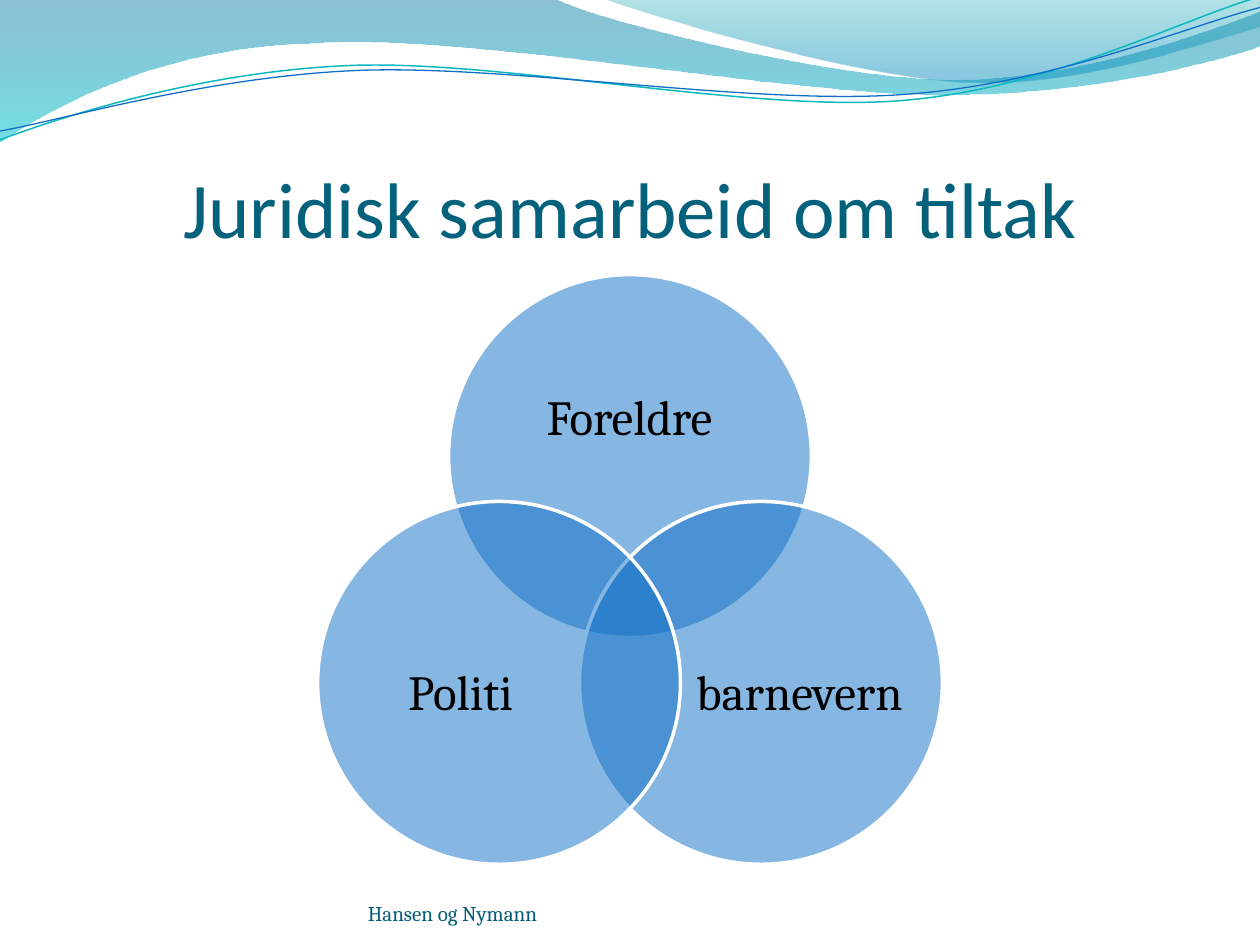
from math import cos, radians, sin

from pptx import Presentation
from pptx import util as u
from pptx.dml.color import RGBColor
from pptx.enum import shapes, text
from pptx.oxml.ns import qn
from pptx.oxml.xmlchemy import OxmlElement

TITLE = ("Juridisk samarbeid om tiltak", (0.5, 0.77, 9, 1.25))
FOOTER = ("Hansen og Nymann", (2.92, 6.95, 3.67, 0.4))
HUB, REACH, RADIUS = (5, 4.82), 1.2, 1.44
CIRCLES = [
    ("Foreldre", -90, (3.94, 2.68, 2.11, 1.3)),
    ("barnevern", 30, (5.48, 4.72, 1.73, 1.58)),
    ("Politi", 150, (2.79, 4.72, 1.73, 1.58)),
]
BANDS = [
    ([(0, 0), (4.4, -0.01), (4.76, 0.17, 6.64, 0.63, 7.58, 0.63),
      (8.53, 0.63, 9.58, 0.26, 10, 0.09), (10.01, 0.36),
      (9.83, 0.44, 8.7, 0.76, 7.46, 0.75), (6.22, 0.75, 3.82, 0.28, 2.57, 0.34),
      (1.29, 0.36, 0.46, 0.83, -0.01, 1.13), (0, 0)],
     [(0, "0074A1", 45), (1, "00C6CF", 55)]),
    ([(4.79, -0.01), (5.09, 0.11, 6.82, 0.62, 7.69, 0.65),
      (8.56, 0.69, 9.61, 0.32, 10, 0.21), (10, 0), (4.79, -0.01)],
     [(0, "00A1A9", 30), (0.8, "008BBF", 45)]),
]
TILT = 2.7
WAVES = [
    ([(0, 1.11), (0.48, 0.93, 1.58, 0.57, 2.77, 0.52),
      (3.95, 0.47, 5.93, 0.89, 7.13, 0.8), (8.33, 0.71, 9.38, 0.15, 9.98, -0.02)],
     (4.99, 0.57), "0AB8BF", 0.85),
    ([(0, 1.04), (0.47, 0.96, 1.64, 0.61, 2.83, 0.56),
      (4.03, 0.51, 5.97, 0.84, 7.17, 0.75), (8.36, 0.67, 9.41, 0.21, 10, 0.06)],
     (5, 0.59), "0F6FC6", 0.75),
]


def cm(inch):
    return u.Cm(inch * 2.54)


def paint(target, code):
    target.rgb = RGBColor.from_string(code)


def fade(node, shares):
    for clr, share in zip(node.iter(qn("a:srgbClr")), shares):
        alpha = OxmlElement("a:alpha")
        alpha.set("val", str(share * 1000))
        clr.append(alpha)


def pairs(step):
    return list(zip(step[::2], step[1::2]))


def turn(step, pivot):
    c, s = cos(radians(TILT)), sin(radians(TILT))
    out = []
    for x, y in pairs(step):
        dx, dy = x - pivot[0], y - pivot[1]
        out += [pivot[0] + dx * c - dy * s, pivot[1] + dx * s + dy * c]
    return out


def draw(tree, track, close):
    dots = [(cm(x), cm(y)) for step in track for x, y in pairs(step)]
    pen = tree.build_freeform(*dots[0], scale=1.0)
    pen.add_line_segments(dots[1:], close=close)
    shape = pen.convert_to_shape()
    shape.shadow.inherit = False
    lines = iter(list(shape.element.iter(qn("a:lnTo"))))
    for step in track[1:]:
        first = next(lines)
        if len(step) == 2:
            continue
        curve = OxmlElement("a:cubicBezTo")
        first.addprevious(curve)
        for line in (first, next(lines), next(lines)):
            curve.append(line[0])
            line.getparent().remove(line)
    return shape


def add_band(tree, track, stops):
    band = draw(tree, track, True)
    band.line.fill.background()
    band.fill.gradient()
    band.fill.gradient_angle = 270
    for stop, (place, code, _) in zip(band.fill.gradient_stops, stops):
        stop.position = place
        paint(stop.color, code)
    fade(band.element.spPr, [share for _, _, share in stops])


def add_wave(tree, track, pivot, code, width):
    wave = draw(tree, [turn(step, pivot) for step in track], False)
    wave.rotation = 360 - TILT
    wave.fill.background()
    paint(wave.line.color, code)
    wave.line.width = u.Pt(width)


def add_circle(tree, angle):
    x = HUB[0] + REACH * cos(radians(angle)) - RADIUS
    y = HUB[1] + REACH * sin(radians(angle)) - RADIUS
    disc = tree.add_shape(
        shapes.MSO_SHAPE.OVAL, cm(x), cm(y), cm(2 * RADIUS), cm(2 * RADIUS))
    disc.shadow.inherit = False
    disc.fill.solid()
    paint(disc.fill.fore_color, "0F6FC6")
    fade(disc.element.spPr, [50])
    paint(disc.line.color, "FFFFFF")
    disc.line.width = u.Pt(2)


def write(shape, words, size, font, code, anchor, align, inset=0):
    frame = shape.text_frame
    frame.text = words
    frame.word_wrap = True
    frame.auto_size = text.MSO_AUTO_SIZE.NONE
    frame.vertical_anchor = anchor
    frame.margin_left = frame.margin_right = frame.margin_bottom = 0
    frame.margin_top = cm(inset)
    para = frame.paragraphs[0]
    para.alignment = align
    para.font.size = u.Pt(size)
    para.font.name = font
    paint(para.font.color, code)
    return para


def main():
    deck = Presentation()
    deck.slide_width, deck.slide_height = cm(10), cm(7.5)
    slide = deck.slides.add_slide(deck.slide_layouts[5])
    tree = slide.shapes
    mid, low = text.MSO_ANCHOR.MIDDLE, text.MSO_ANCHOR.BOTTOM
    left, center = text.PP_ALIGN.LEFT, text.PP_ALIGN.CENTER

    for track, stops in BANDS:
        add_band(tree, track, stops)
    waves = tree.add_group_shape().shapes
    for wave in WAVES:
        add_wave(waves, *wave)

    words, box = TITLE
    title = tree.title
    tree.element.append(title.element)
    title.left, title.top, title.width, title.height = map(cm, box)
    write(title, words, 45, "Calibri", "04617B", low, center, 0.05)

    venn = tree.add_group_shape().shapes
    for words, angle, box in CIRCLES:
        add_circle(venn, angle)
        label = venn.add_textbox(*map(cm, box))
        para = write(label, words, 28, "Cambria", "000000", mid, center)
        para.line_spacing = 0.9

    words, box = FOOTER
    note = tree.add_textbox(*map(cm, box))
    write(note, words, 12, "Cambria", "045D75", low, left)
    deck.save("out.pptx")


if __name__ == "__main__":
    main()
